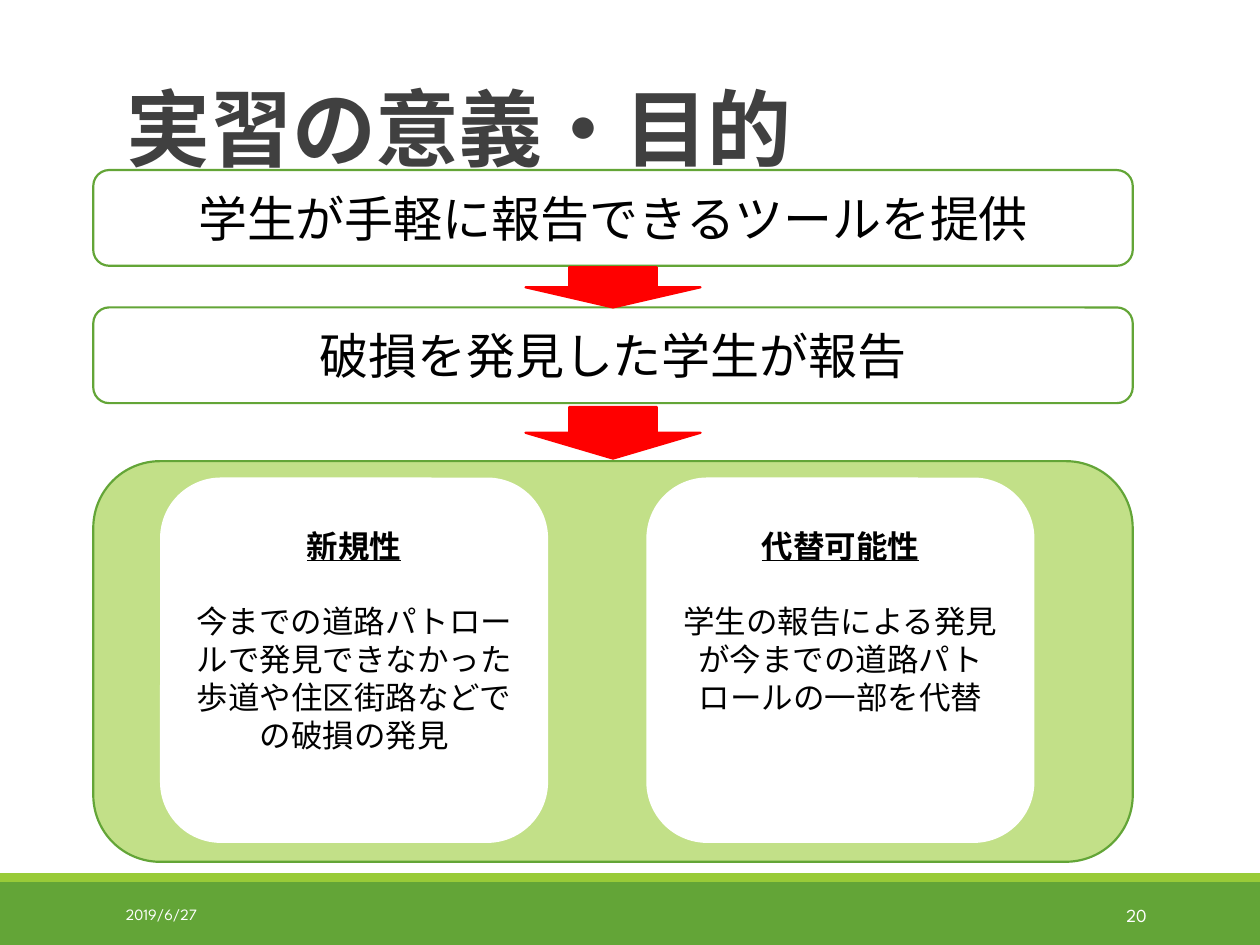
import pptx
import pptx.util
import pptx.dml.color
import pptx.enum.shapes
import pptx.enum.text
import pptx.oxml

Inches = pptx.util.Inches
Pt = pptx.util.Pt
Kind = pptx.enum.shapes.MSO_SHAPE
Align = pptx.enum.text.PP_ALIGN
Anchor = pptx.enum.text.MSO_ANCHOR
GREEN = "63A537"


def paint(part, hue):
    part.solid()
    part.fore_color.rgb = pptx.dml.color.RGBColor.from_string(hue)


def write(par, text, size=18, font="League Spartan", hue="000000",
          bold=False, under=False, align=Align.CENTER, gap=0):
    par.alignment = align
    par.space_before = Pt(gap)
    run = par.add_run()
    run.text = text
    run.font.size = Pt(size)
    run.font.name = font
    run.font.bold = bold
    run.font.underline = under
    paint(run.font.fill, hue)
    east = pptx.oxml.parse_xml(
        '<a:ea xmlns:a="http://schemas.openxmlformats.org/drawingml/2006/main"'
        f' typeface="{font}"/>')
    run.font._element.find(pptx.oxml.ns.qn("a:latin")).addnext(east)
    return run


deck = pptx.Presentation()
deck.slide_width = Inches(10)
deck.slide_height = Inches(7.5)
slide = deck.slides.add_slide(deck.slide_layouts[5])

title = slide.shapes.title
title.left, title.top = Inches(0.9), Inches(0.31)
title.width, title.height = Inches(8.25), Inches(1.15)
frame = title.text_frame
frame.vertical_anchor = Anchor.BOTTOM
frame.auto_size = pptx.enum.text.MSO_AUTO_SIZE.NONE
par = frame.paragraphs[0]
par.line_spacing = 0.85
run = write(par, "実習の意義・目的", size=48, font="Noto Sans CJK JP",
            hue="404040", bold=True, align=Align.LEFT)
run.font._element.set("spc", "-50")

boxes = {}
for name, kind, left, top, wide, high, fill, line in [
    ("base", Kind.RECTANGLE, 0, 7, 10, 0.5, GREEN, None),
    ("strip", Kind.RECTANGLE, 0, 6.93, 10, 0.07, "99CB38", None),
    ("tool", Kind.ROUNDED_RECTANGLE, 0.74, 1.35, 8.25, 0.76, "FFFFFF", GREEN),
    ("panel", Kind.ROUNDED_RECTANGLE, 0.74, 3.66, 8.25, 3.18, "C2E088", GREEN),
    ("report", Kind.ROUNDED_RECTANGLE, 0.74, 2.44, 8.25, 0.76, "FFFFFF", GREEN),
    ("lower", Kind.DOWN_ARROW, 4.17, 3.23, 1.39, 0.41, "FF0000", "FF0000"),
    ("upper", Kind.DOWN_ARROW, 4.17, 2.12, 1.39, 0.32, "FF0000", "FF0000"),
    ("novel", Kind.FLOWCHART_ALTERNATE_PROCESS, 1.27, 3.79, 3.08, 2.9, "FFFFFF", None),
    ("swap", Kind.FLOWCHART_ALTERNATE_PROCESS, 5.13, 3.79, 3.08, 2.9, "FFFFFF", None),
]:
    box = slide.shapes.add_shape(kind, Inches(left), Inches(top), Inches(wide), Inches(high))
    box.shadow.inherit = False
    paint(box.fill, fill)
    if line:
        paint(box.line.fill, line)
        box.line.width = Pt(1.25)
    else:
        box.line.fill.background()
    boxes[name] = box

for name, text in [
    ("tool", "学生が手軽に報告できるツールを提供"),
    ("report", "破損を発見した学生が報告"),
]:
    frame = boxes[name].text_frame
    frame.vertical_anchor = Anchor.MIDDLE
    write(frame.paragraphs[0], text, size=28)

for name, head, body in [
    ("novel", "新規性", "今までの道路パトロールで発見できなかった歩道や住区街路などでの破損の発見"),
    ("swap", "代替可能性", "学生の報告による発見が今までの道路パトロールの一部を代替"),
]:
    frame = boxes[name].text_frame
    frame.word_wrap = True
    frame.vertical_anchor = Anchor.TOP
    frame.margin_top = Inches(0.25)
    write(frame.paragraphs[0], head, bold=True, under=True)
    write(frame.add_paragraph(), body, gap=21.6)

for text, left, wide, size, align in [
    ("2019/6/27", 0.9, 2.03, 9, Align.LEFT),
    ("20", 8.12, 1.08, 10.5, Align.RIGHT),
]:
    note = slide.shapes.add_textbox(Inches(left), Inches(7.06), Inches(wide), Inches(0.4))
    frame = note.text_frame
    frame.word_wrap = True
    frame.vertical_anchor = Anchor.MIDDLE
    write(frame.paragraphs[0], text, size=size, hue="FFFFFF", align=align)

deck.save("out.pptx")
